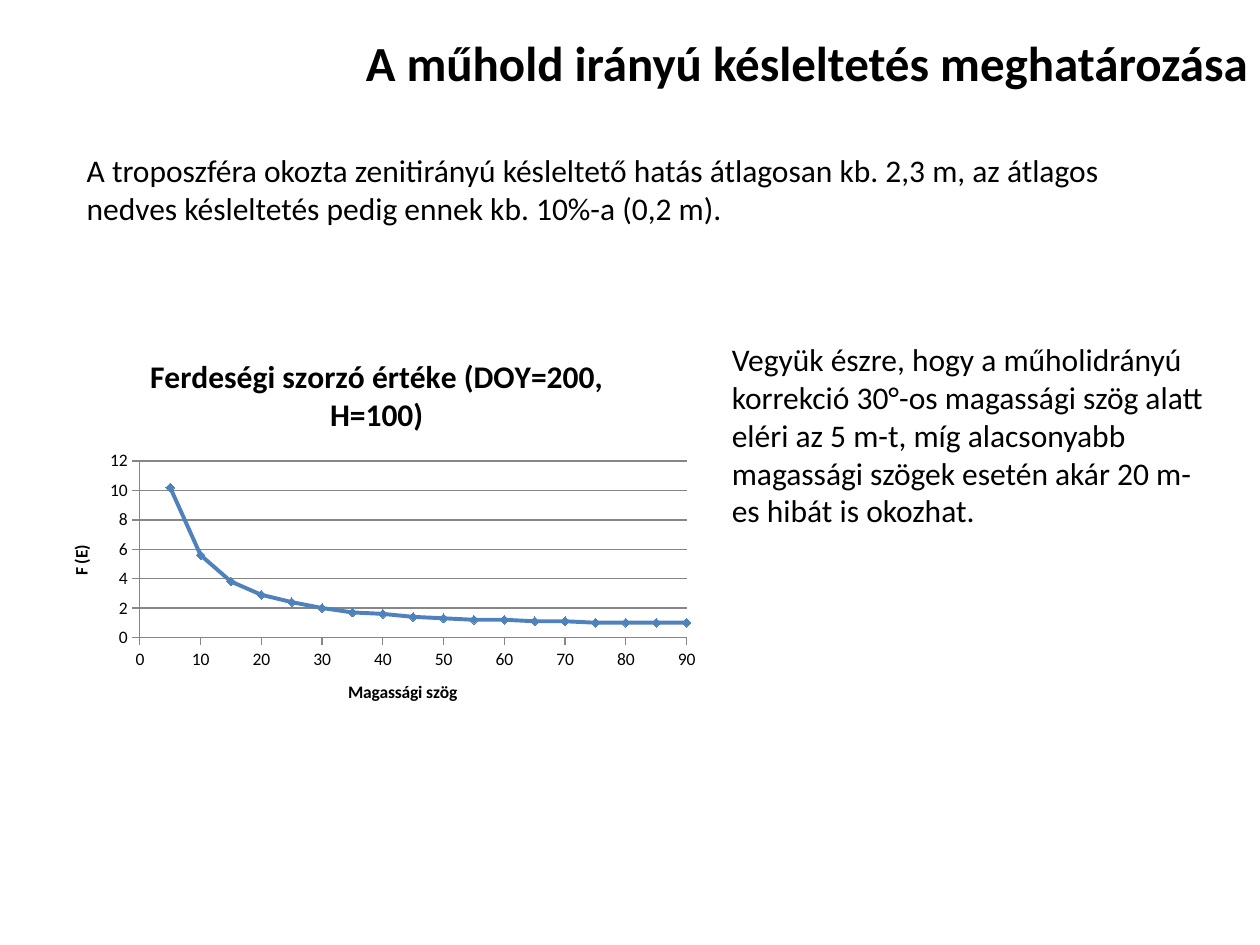
from lxml import etree
from pptx import Presentation
from pptx import util as u
from pptx.chart.data import XyChartData
from pptx.dml.color import RGBColor
from pptx.enum import chart as ch, text
from pptx.oxml.ns import qn

FACTORS = [None, 10.2, 5.6, 3.8, 2.9, 2.4, 2, 1.7, 1.6, 1.4,
           1.3, 1.2, 1.2, 1.1, 1.1, 1, 1, 1, 1]


def color(value):
    return RGBColor.from_string(value)


class Deck:
    """Holds the text style and the current slide, and adds elements to it."""

    font, ink, accent, grid = "Calibri", "000000", "4F81BD", "868686"

    def __init__(self, slide):
        self.s = slide

    def style(self, font, size, bold=False):
        font.name, font.size, font.bold = self.font, u.Pt(size), bold
        font.color.rgb = color(self.ink)

    def text(self, box, content, size=18, bold=False, align=text.PP_ALIGN.LEFT, wrap=True):
        tf = self.s.shapes.add_textbox(*map(u.Inches, box)).text_frame
        tf.word_wrap = wrap
        tf.auto_size = text.MSO_AUTO_SIZE.SHAPE_TO_FIT_TEXT
        p = tf.paragraphs[0]
        p.text, p.alignment = content, align
        self.style(p.font, size, bold)

    def title(self, owner, content, size):
        owner.has_title = True
        title = owner.chart_title if hasattr(owner, "chart_title") else owner.axis_title
        p = title.text_frame.paragraphs[0]
        p.text = content
        self.style(p.font, size, True)

    def axis(self, axis, title, top, step, grid):
        self.title(axis, title, 10)
        axis.minimum_scale, axis.maximum_scale, axis.major_unit = 0, top, step
        axis.has_major_gridlines = grid
        axis.major_tick_mark = ch.XL_TICK_MARK.OUTSIDE
        axis.minor_tick_mark = ch.XL_TICK_MARK.NONE
        axis.tick_labels.number_format = "General"
        axis.tick_labels.number_format_is_linked = False
        lines = [axis.format.line] + ([axis.major_gridlines.format.line] if grid else [])
        for line in lines:
            line.color.rgb, line.width = color(self.grid), u.Pt(0.75)

    def plot_area(self, chart, size, inner):
        area = chart.plots[0]._element.getparent()
        for old in area.findall(qn("c:layout")):
            area.remove(old)
        layout = etree.Element(qn("c:layout"))
        area.insert(0, layout)
        manual = etree.SubElement(layout, qn("c:manualLayout"))
        values = {"layoutTarget": "inner", "xMode": "edge", "yMode": "edge"}
        values.update(zip("xywh", (part / whole for part, whole in zip(inner, size * 2))))
        for tag, value in values.items():
            etree.SubElement(manual, qn(f"c:{tag}")).set("val", str(value))

    def scatter(self, box, title, name, points):
        data = XyChartData()
        series = data.add_series(name)
        for x, y in points:
            series.add_data_point(x, y)
        chart = self.s.shapes.add_chart(
            ch.XL_CHART_TYPE.XY_SCATTER_LINES, *map(u.Inches, box), data).chart
        self.style(chart.font, 10)
        chart.has_legend = False
        self.title(chart, title, 18)
        plot = chart.plots[0]
        plot.vary_by_categories = False
        line = plot.series[0]
        for pt in list(line._element.iter(qn("c:pt"))):
            if pt.findtext(qn("c:v")) in ("None", "", None):
                pt.getparent().remove(pt)
        line.smooth = False
        line.format.line.color.rgb, line.format.line.width = color(self.accent), u.Pt(2.25)
        marker = line.marker
        marker.style, marker.size = ch.XL_MARKER_STYLE.DIAMOND, 5
        marker.format.fill.solid()
        marker.format.fill.fore_color.rgb = color(self.accent)
        marker.format.line.color.rgb = color(self.accent)
        return chart


def main():
    prs = Presentation()
    prs.slide_width, prs.slide_height = u.Inches(10), u.Inches(7.5)
    deck = Deck(prs.slides.add_slide(prs.slide_layouts[6]))
    deck.text((2.72, 0.21, 7.28, 0.57), "A műhold irányú késleltetés meghatározása",
              size=28, bold=True, align=text.PP_ALIGN.RIGHT, wrap=False)
    size = (5.28, 3.14)
    chart = deck.scatter((0.35, 2.65, *size), "Ferdeségi szorzó értéke (DOY=200, H=100)",
                         "Series 1", zip(range(0, 91, 5), FACTORS))
    deck.axis(chart.category_axis, "Magassági szög", 90, 10, False)
    deck.axis(chart.value_axis, "F (E)", 12, 2, True)
    deck.plot_area(chart, size, (0.76, 1.01, 4.34, 1.4))
    deck.text((0.59, 1.15, 8.66, 0.71),
              "A troposzféra okozta zenitirányú késleltető hatás átlagosan kb. 2,3 m, "
              "az átlagos nedves késleltetés pedig ennek kb. 10%-a (0,2 m).")
    deck.text((5.71, 2.65, 3.98, 1.62),
              "Vegyük észre, hogy a műholidrányú korrekció 30°-os magassági szög alatt "
              "eléri az 5 m-t, míg alacsonyabb magassági szögek esetén akár 20 m-es "
              "hibát is okozhat.")
    prs.save("out.pptx")


if __name__ == "__main__":
    main()
